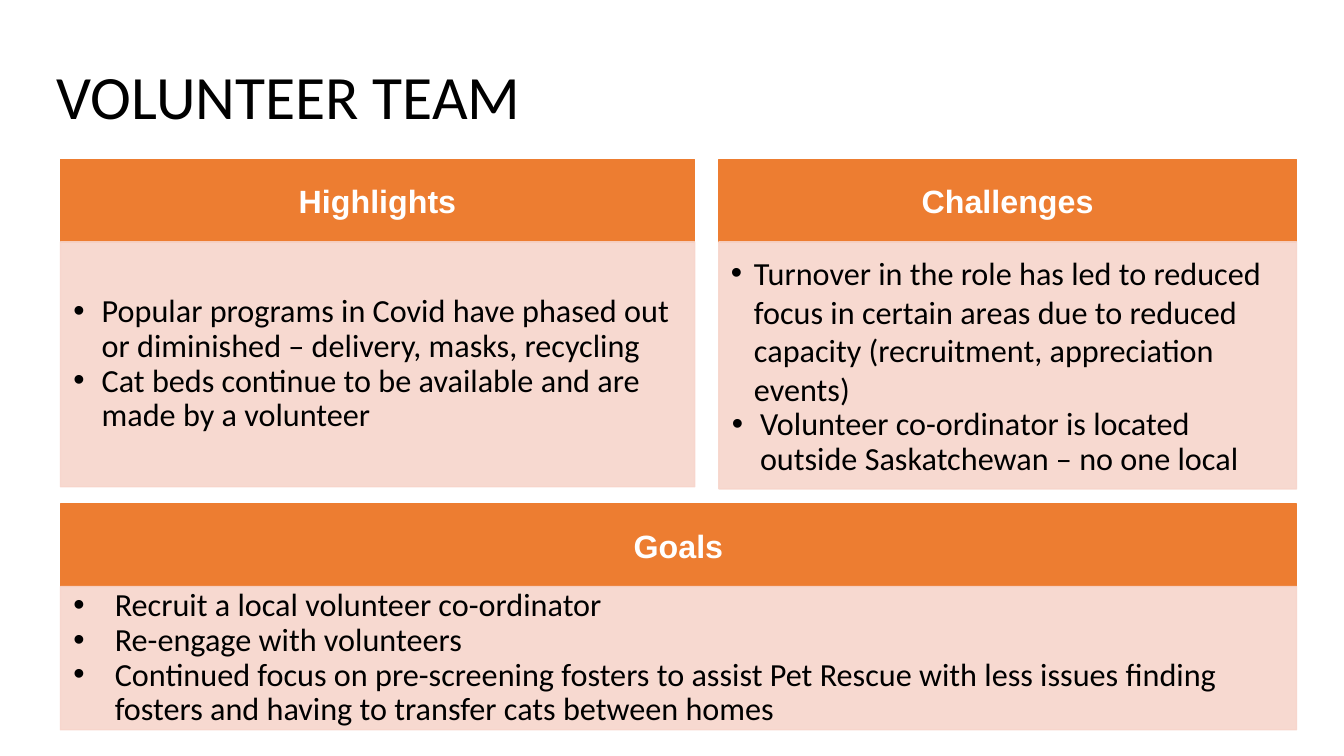
from dataclasses import dataclass

from lxml.etree import SubElement
from pptx import Presentation
from pptx.dml.color import RGBColor
from pptx.enum.shapes import MSO_SHAPE
from pptx.enum.text import MSO_ANCHOR, MSO_AUTO_SIZE, PP_ALIGN
from pptx.oxml.ns import qn
from pptx.util import Inches, Pt


@dataclass(frozen=True)
class Theme:
    accent: RGBColor = RGBColor(0xED, 0x7D, 0x31)
    tint: RGBColor = RGBColor(0xF7, 0xD5, 0xCB)
    ink: RGBColor = RGBColor(0, 0, 0)
    paper: RGBColor = RGBColor(0xFF, 0xFF, 0xFF)
    heading_font: str = "Arial"
    text_font: str = "Calibri"
    title_size: int = 44
    text_size: int = 23
    tint_opacity: int = 89


@dataclass(frozen=True)
class Box:
    left: float
    top: float
    width: float
    height: float

    def inches(self):
        return [Inches(n) for n in (self.left, self.top, self.width, self.height)]


@dataclass(frozen=True)
class Point:
    text: str
    indent: float = 0.31
    hanging: float = 0.28
    line_spacing: float = 0.9


THEME = Theme()
HEADING_HEIGHT = 0.82
LEFT, RIGHT = 0.6, 12.86
CHALLENGES_LEFT = 7.13
TOP, GOALS_TOP = 1.58, 5.0

HIGHLIGHTS = [
    Point("Popular programs in Covid have phased out or diminished – delivery, masks, recycling"),
    Point("Cat beds continue to be available and are made by a volunteer"),
]
CHALLENGES = [
    Point("Turnover in the role has led to reduced focus in certain areas due to reduced "
          "capacity (recruitment, appreciation events)", 0.25, 0.23, 1.0),
    Point("Volunteer co-ordinator is located outside Saskatchewan – no one local"),
]
GOALS = [
    Point(text, 0.44, 0.41)
    for text in (
        "Recruit a local volunteer co-ordinator",
        "Re-engage with volunteers",
        "Continued focus on pre-screening fosters to assist Pet Rescue with less issues "
        "finding fosters and having to transfer cats between homes",
    )
]
PANELS = [
    ("Goals", GOALS, Box(LEFT, GOALS_TOP, RIGHT - LEFT, 2.24)),
    ("Challenges", CHALLENGES, Box(CHALLENGES_LEFT, TOP, RIGHT - CHALLENGES_LEFT, 3.27)),
    ("Highlights", HIGHLIGHTS, Box(LEFT, TOP, 6.29, 3.25)),
]


def style_text(paragraph, font_name, size, color, bold=False):
    for run in paragraph.runs:
        run.font.name = font_name
        run.font.size = Pt(size)
        run.font.color.rgb = color
        run.font.bold = bold


def add_bullet(paragraph, point):
    properties = paragraph._p.get_or_add_pPr()
    properties.set("marL", str(Inches(point.indent)))
    properties.set("indent", str(-Inches(point.hanging)))
    bullet_color = SubElement(properties, qn("a:buClr"))
    SubElement(bullet_color, qn("a:srgbClr"), val=str(THEME.ink))
    SubElement(properties, qn("a:buFont"), typeface=THEME.heading_font)
    SubElement(properties, qn("a:buChar"), char="•")


def add_block(slide, box, color):
    block = slide.shapes.add_shape(MSO_SHAPE.RECTANGLE, *box.inches())
    block.shadow.inherit = False
    block.fill.solid()
    block.fill.fore_color.rgb = color
    block.line.color.rgb = color
    block.line.width = Pt(1)
    frame = block.text_frame
    frame.word_wrap = True
    frame.vertical_anchor = MSO_ANCHOR.MIDDLE
    frame.margin_left = frame.margin_right = Inches(0.1)
    frame.margin_top = frame.margin_bottom = Inches(0.1)
    return block


def add_title(slide, box, text):
    title = slide.shapes.title
    title.left, title.top, title.width, title.height = box.inches()
    frame = title.text_frame
    frame.text = text
    frame.word_wrap = True
    frame.auto_size = MSO_AUTO_SIZE.NONE
    frame.vertical_anchor = MSO_ANCHOR.MIDDLE
    heading = frame.paragraphs[0]
    heading.alignment = PP_ALIGN.LEFT
    heading.line_spacing = 0.9
    style_text(heading, THEME.text_font, THEME.title_size, THEME.ink)


def add_heading(slide, box, text):
    frame = add_block(slide, box, THEME.accent).text_frame
    frame.text = text
    heading = frame.paragraphs[0]
    heading.alignment = PP_ALIGN.CENTER
    style_text(heading, THEME.heading_font, THEME.text_size, THEME.paper, bold=True)


def add_points(slide, box, points):
    block = add_block(slide, box, THEME.tint)
    for tint in block._element.spPr.iter(qn("a:srgbClr")):
        SubElement(tint, qn("a:alpha"), val=str(THEME.tint_opacity * 1000))
    frame = block.text_frame
    frame.text = "\n".join(point.text for point in points)
    for paragraph, point in zip(frame.paragraphs, points):
        paragraph.level = 1
        paragraph.alignment = PP_ALIGN.LEFT
        paragraph.line_spacing = point.line_spacing
        add_bullet(paragraph, point)
        style_text(paragraph, THEME.text_font, THEME.text_size, THEME.ink)


def add_panel(slide, box, heading, points):
    add_heading(slide, Box(box.left, box.top, box.width, HEADING_HEIGHT), heading)
    points_box = Box(box.left, box.top + HEADING_HEIGHT, box.width, box.height - HEADING_HEIGHT)
    add_points(slide, points_box, points)


def main():
    presentation = Presentation()
    presentation.slide_width = Inches(13.33)
    presentation.slide_height = Inches(7.5)
    slide = presentation.slides.add_slide(presentation.slide_layouts.get_by_name("Title Only"))
    add_title(slide, Box(0.46, 0.26, 11.5, 1.45), "VOLUNTEER TEAM")
    for heading, points, box in PANELS:
        add_panel(slide, box, heading, points)
    presentation.save("out.pptx")


if __name__ == "__main__":
    main()
